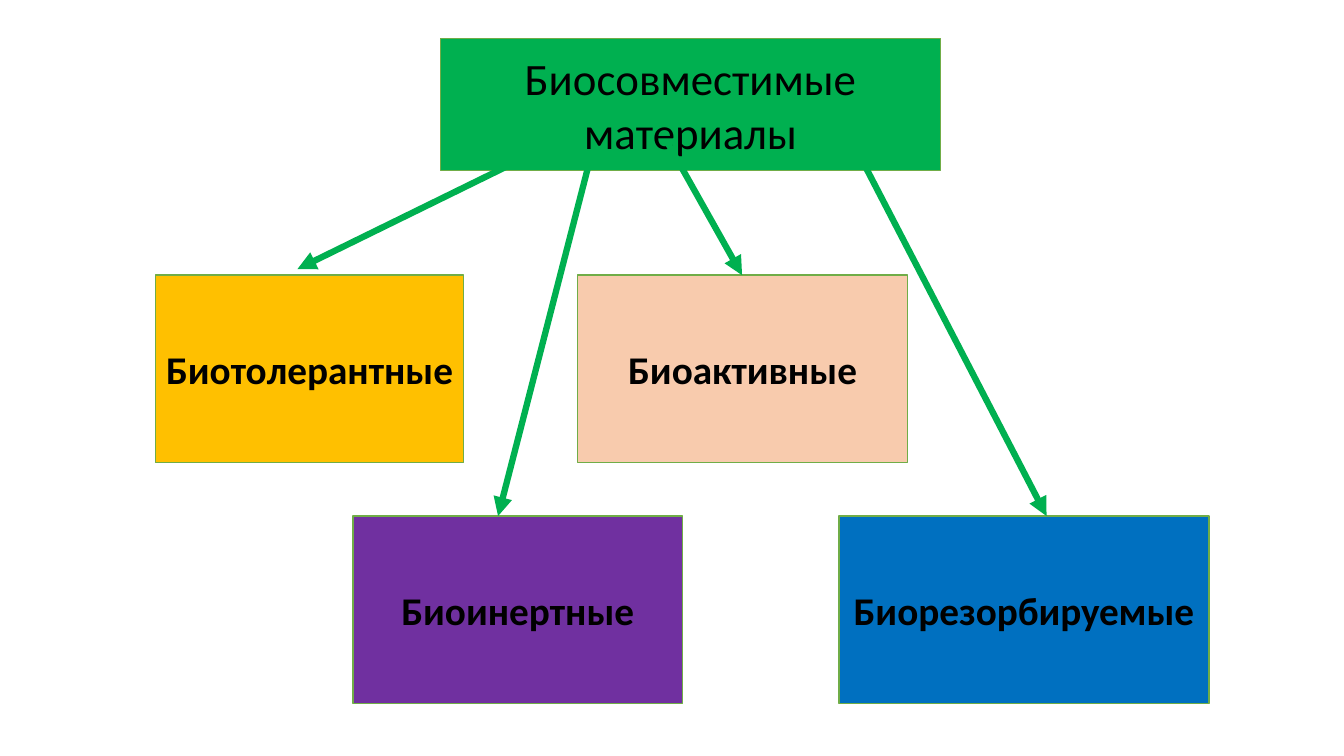
from lxml.etree import SubElement
from pptx import Presentation
from pptx.dml.color import RGBColor
from pptx.enum.shapes import MSO_CONNECTOR, MSO_SHAPE
from pptx.enum.text import MSO_ANCHOR, MSO_AUTO_SIZE, PP_ALIGN
from pptx.oxml.ns import qn
from pptx.util import Inches, Pt

HUES = {
    "green": "00B050",
    "edge": "70AD47",
    "gold": "FFC000",
    "plum": "7030A0",
    "peach": "F8CBAD",
    "blue": "0070C0",
    "ink": "000000",
}
UPPER, LOWER, TALL = 2.73, 5.12, 1.86
KINDS = [
    ("Биотолерантные", "gold", 1.54, UPPER, 3.06),
    ("Биоинертные", "plum", 3.5, LOWER, 3.27),
    ("Биоактивные", "peach", 5.73, UPPER, 3.27),
    ("Биорезорбируемые", "blue", 8.32, LOWER, 3.67),
]
ARROWS = [
    (6.63, 1.43, 7.36, UPPER),
    (5.05, 1.64, 2.95, 2.67),
    (5.85, 1.59, 4.94, LOWER),
    (8.55, 1.59, 10.38, LOWER),
]


def tint(name):
    return RGBColor.from_string(HUES[name])


def dress(box, text, hue, size, bold, wrap):
    box.fill.solid()
    box.fill.fore_color.rgb = tint(hue)
    box.line.color.rgb = tint("edge")
    box.line.width = Pt(1)
    frame = box.text_frame
    frame.text = text
    look = {
        "auto_size": MSO_AUTO_SIZE.NONE,
        "word_wrap": wrap,
        "vertical_anchor": MSO_ANCHOR.MIDDLE,
    }
    for key, value in look.items():
        setattr(frame, key, value)
    para = frame.paragraphs[0]
    para.alignment = PP_ALIGN.CENTER
    font = para.runs[0].font
    for key, value in {"name": "Calibri", "size": Pt(size), "bold": bold}.items():
        setattr(font, key, value)
    font.color.rgb = tint("ink")


deck = Presentation()
deck.slide_width, deck.slide_height = Inches(13.33), Inches(7.5)
slide = deck.slides.add_slide(deck.slide_layouts[5])
shapes = slide.shapes

title = shapes.title
place = {"left": 4.37, "top": 0.38, "width": 4.96, "height": 1.31}
for key, value in place.items():
    setattr(title, key, Inches(value))
dress(title, "Биосовместимые материалы", "green", 32, False, True)

for text, hue, left, top, width in KINDS:
    box = shapes.add_shape(
        MSO_SHAPE.RECTANGLE, Inches(left), Inches(top), Inches(width), Inches(TALL)
    )
    box.shadow.inherit = False
    dress(box, text, hue, 28, True, False)

for ends in ARROWS:
    arrow = shapes.add_connector(MSO_CONNECTOR.STRAIGHT, *map(Inches, ends))
    arrow.line.color.rgb = tint("green")
    arrow.line.width = Pt(4.5)
    SubElement(arrow.line._get_or_add_ln(), qn("a:tailEnd"), type="triangle")
    SubElement(arrow._element.spPr, qn("a:effectLst"))

deck.save("out.pptx")
